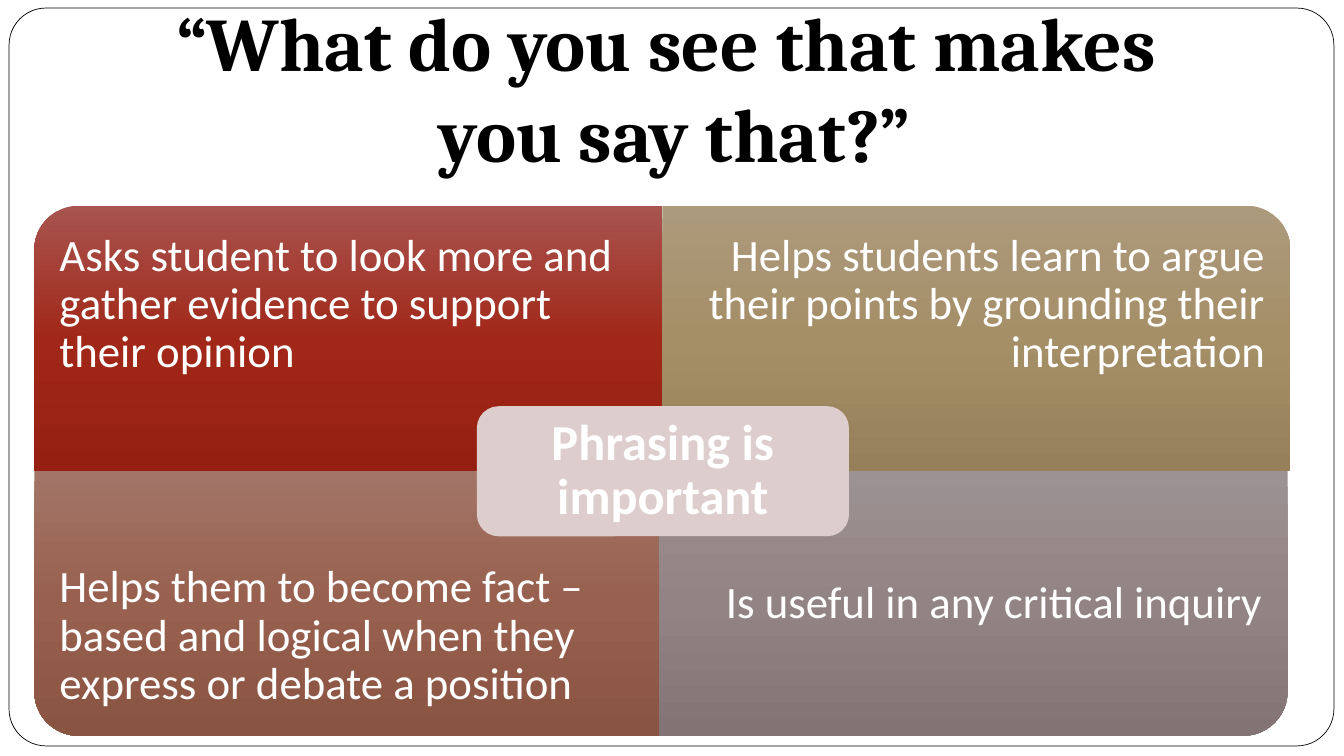
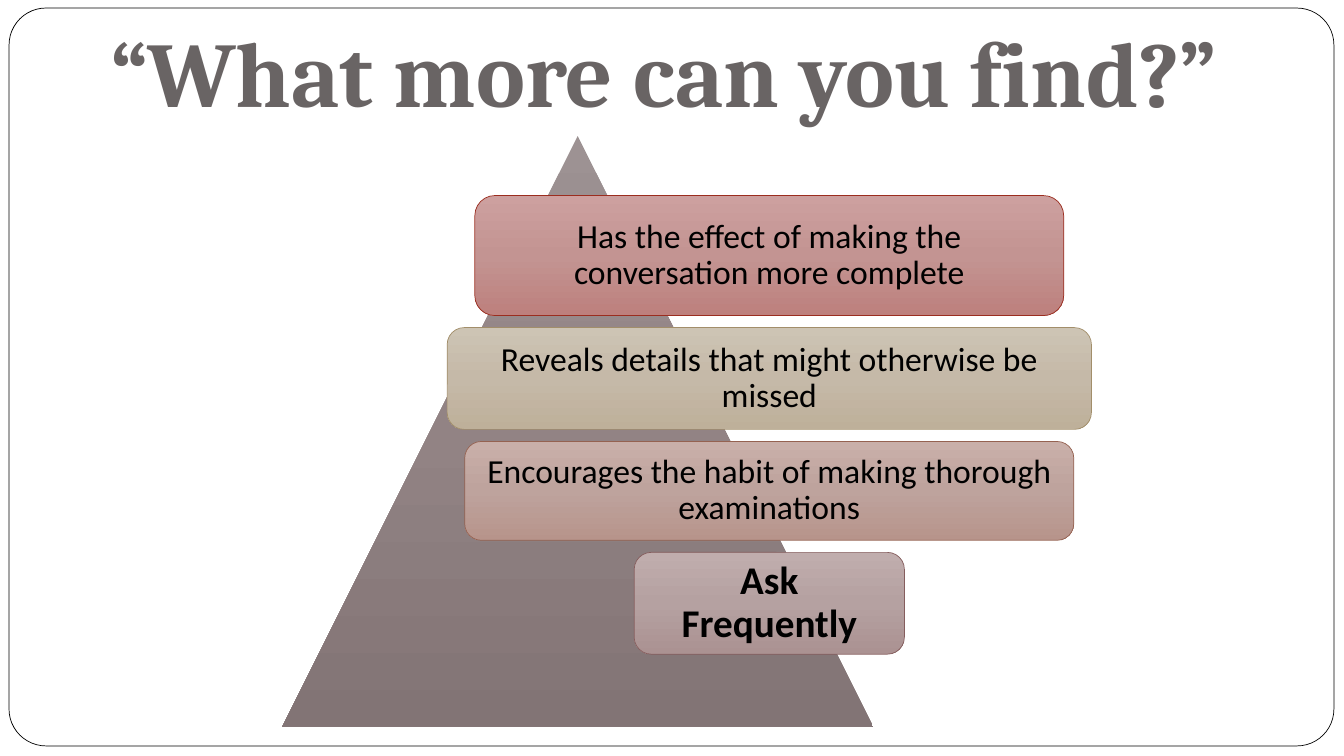
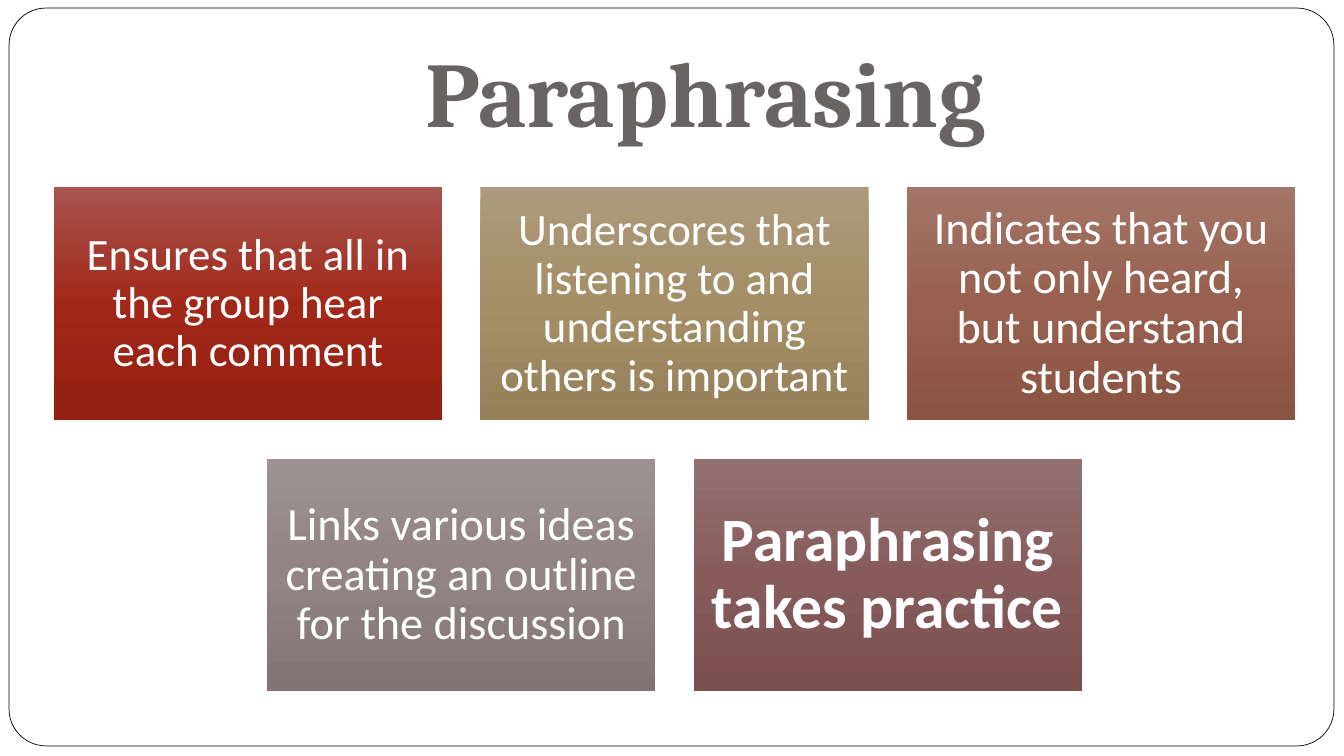
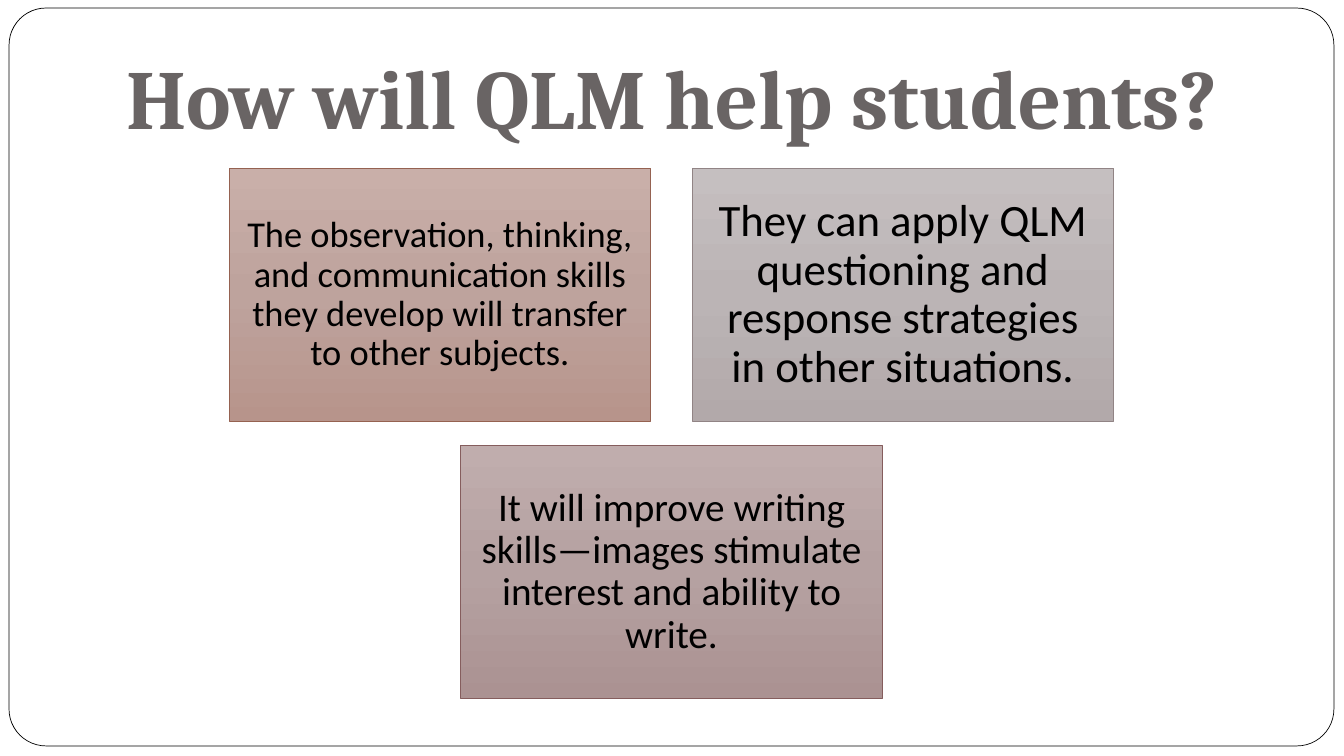
import copy

import pptx
import pptx.dml.color
import pptx.enum.shapes
import pptx.enum.text
import pptx.oxml.ns
import pptx.util

Inches = pptx.util.Inches
Pt = pptx.util.Pt
RGBColor = pptx.dml.color.RGBColor
MSO_SHAPE = pptx.enum.shapes.MSO_SHAPE
PP_ALIGN = pptx.enum.text.PP_ALIGN
MSO_ANCHOR = pptx.enum.text.MSO_ANCHOR
qn = pptx.oxml.ns.qn

WHITE = RGBColor(0xFF, 0xFF, 0xFF)
BLACK = RGBColor(0x00, 0x00, 0x00)
TITLE_GREY = RGBColor(0x69, 0x64, 0x64)
PALE_ROSE = RGBColor(0xDE, 0xCD, 0xCD)

# Gradients run from top to bottom in three stops
RED = (RGBColor(0xA8, 0x54, 0x4F), RGBColor(0xA1, 0x28, 0x19), RGBColor(0x95, 0x1F, 0x11))
SAND = (RGBColor(0xAC, 0x9A, 0x7C), RGBColor(0xA5, 0x8F, 0x67), RGBColor(0x96, 0x80, 0x59))
BROWN = (RGBColor(0xA2, 0x75, 0x68), RGBColor(0x98, 0x60, 0x4E), RGBColor(0x8A, 0x54, 0x42))
GREY = (RGBColor(0x9D, 0x92, 0x93), RGBColor(0x92, 0x83, 0x84), RGBColor(0x82, 0x74, 0x75))
PLUM = (RGBColor(0x93, 0x71, 0x71), RGBColor(0x87, 0x5B, 0x5B), RGBColor(0x7A, 0x4F, 0x4F))
LIGHT_RED = (RGBColor(0xCD, 0xA0, 0x9F), RGBColor(0xC3, 0x94, 0x92), RGBColor(0xBD, 0x80, 0x7D))
LIGHT_SAND = (RGBColor(0xCD, 0xC4, 0xB4), RGBColor(0xC5, 0xB9, 0xA8), RGBColor(0xBE, 0xB0, 0x9A))
LIGHT_BROWN = (RGBColor(0xC9, 0xAF, 0xA9), RGBColor(0xBE, 0xA3, 0x9D), RGBColor(0xB7, 0x94, 0x8B))
LIGHT_GREY = (RGBColor(0xC5, 0xBF, 0xC0), RGBColor(0xBB, 0xB4, 0xB5), RGBColor(0xB2, 0xA9, 0xAA))
LIGHT_PLUM = (RGBColor(0xC0, 0xAD, 0xAD), RGBColor(0xB5, 0xA1, 0xA1), RGBColor(0xAB, 0x92, 0x92))

OUTLINES = {
    LIGHT_RED: RGBColor(0x9B, 0x2D, 0x1F),
    LIGHT_SAND: RGBColor(0xA2, 0x8E, 0x6A),
    LIGHT_BROWN: RGBColor(0x95, 0x62, 0x51),
    LIGHT_GREY: RGBColor(0x91, 0x84, 0x85),
    LIGHT_PLUM: RGBColor(0x85, 0x5D, 0x5D),
}


def add_panel(slide, preset, left, top, width, height, paint):
    """Add a shape whose paint is one colour or a three-stop gradient."""
    shape = slide.shapes.add_shape(preset, Inches(left), Inches(top), Inches(width), Inches(height))
    shape.shadow.inherit = False
    if isinstance(paint, RGBColor):
        shape.fill.solid()
        shape.fill.fore_color.rgb = paint
    else:
        shape.fill.gradient()
        shape.fill.gradient_angle = 270
        gradient = shape.element.spPr.find(qn("a:gradFill"))
        gradient.set("rotWithShape", "0")
        stop_list = gradient.find(qn("a:gsLst"))
        stop_list.append(copy.deepcopy(stop_list[0]))
        for stop, position, colour in zip(shape.fill.gradient_stops, (0, 0.5, 1), paint):
            stop.position = position
            stop.color.rgb = colour
    if paint in OUTLINES:
        shape.line.color.rgb = OUTLINES[paint]
        shape.line.width = Pt(0.5)
    else:
        shape.line.fill.background()
    return shape


def write_text(shape, lines, size, colour, inset, font="Calibri", bold=False,
               align=PP_ALIGN.CENTER, anchor=MSO_ANCHOR.MIDDLE, spacing=0.9):
    frame = shape.text_frame
    frame.word_wrap = True
    frame.auto_size = pptx.enum.text.MSO_AUTO_SIZE.NONE
    frame.vertical_anchor = anchor
    frame.margin_left = frame.margin_right = Inches(inset)
    frame.margin_top = frame.margin_bottom = Inches(inset)
    paragraph = frame.paragraphs[0]
    paragraph.alignment = align
    paragraph.line_spacing = spacing
    for number, line in enumerate(lines):
        if number:
            paragraph.add_line_break()
        run = paragraph.add_run()
        run.text = line
        run.font.name = font
        run.font.size = Pt(size)
        run.font.bold = bold
        run.font.color.rgb = colour


presentation = pptx.Presentation()
presentation.slide_width = Inches(13.33)
presentation.slide_height = Inches(7.5)
layout = presentation.slide_layouts[5]

# Titles: lines, size, colour, left, top, width, height
titles = [
    (["“What do you see that makes ", "you say that?”"], 54, BLACK, 0.34, 0.17, 12.7, 1.69),
    (["“What more can you find?”"], 66, TITLE_GREY, 0, 0.17, 13.17, 1.18),
    (["Paraphrasing"], 66, TITLE_GREY, 1.33, 0.3, 11.33, 1.25),
    (["How will QLM help students?"], 60, TITLE_GREY, 0.6, 0.3, 12.13, 1.25),
]
slides = []
for lines, size, colour, left, top, width, height in titles:
    slide = presentation.slides.add_slide(layout)
    title = slide.shapes.title
    title.left, title.top = Inches(left), Inches(top)
    title.width, title.height = Inches(width), Inches(height)
    write_text(title, lines, size, colour, 0.1, font="Cambria", bold=True,
               anchor=MSO_ANCHOR.BOTTOM, spacing=1.0)
    title.text_frame.margin_top = Inches(0.05)
    slides.append(slide)
phrasing_slide, more_slide, paraphrasing_slide, students_slide = slides

# The rounded frame belongs to the layout, behind everything else
page_frame = add_panel(phrasing_slide, MSO_SHAPE.ROUNDED_RECTANGLE, 0.09, 0.08, 13.14, 7.32, WHITE)
page_frame.adjustments[0] = 0.05
page_frame.line.color.rgb = BLACK
page_frame.line.width = Pt(0.5)
page_frame.element.nvSpPr.cNvPr.set("id", "20")
layout.shapes.element.insert(2, page_frame.element)

# Phrasing: four quadrants, each with its outer corner rounded
quad_width, quad_height, caption_height = 6.23, 2.63, 1.97
quadrants = [
    ("Asks student to look more and gather evidence to support their opinion",
     RED, 270, 0.34, 2.04, 2.04, PP_ALIGN.LEFT),
    ("Helps students learn to argue their points by grounding their interpretation",
     SAND, 0, 6.57, 2.04, 2.04, PP_ALIGN.RIGHT),
    ("Helps them to become fact –based and logical when they express or debate a position",
     BROWN, 180, 0.34, 4.67, 5.33, PP_ALIGN.LEFT),
    ("Is useful in any critical inquiry",
     GREY, 90, 6.54, 4.67, 5.01, PP_ALIGN.RIGHT),
]
for text, paint, rotation, left, top, caption_top, align in quadrants:
    width, height = quad_width, quad_height
    shape_left, shape_top = left, top
    if rotation % 180:
        width, height = height, width
        shape_left += (quad_width - width) / 2
        shape_top += (quad_height - height) / 2
    quadrant = add_panel(phrasing_slide, MSO_SHAPE.ROUND_1_RECTANGLE,
                         shape_left, shape_top, width, height, paint)
    quadrant.rotation = rotation
    caption = phrasing_slide.shapes.add_textbox(
        Inches(left), Inches(caption_top), Inches(quad_width), Inches(caption_height))
    write_text(caption, [text], 32, WHITE, 0.25, align=align)

hub = add_panel(phrasing_slide, MSO_SHAPE.ROUNDED_RECTANGLE, 4.73, 4.03, 3.69, 1.29, PALE_ROSE)
write_text(hub, ["Phrasing is important"], 36, WHITE, 0.15, bold=True)

# What more: bars stacked on a shared centre line over a triangle
add_panel(more_slide, MSO_SHAPE.ISOSCELES_TRIANGLE, 2.8, 1.35, 5.86, 5.86, GREY)
bars = [
    ("Has the effect of making the conversation more complete", LIGHT_RED, 5.84, 1.19, 24, 0.1, False),
    ("Reveals details that might otherwise be missed", LIGHT_SAND, 6.39, 1.01, 24, 0.1, False),
    ("Encourages the habit of making thorough examinations", LIGHT_BROWN, 6.04, 0.98, 24, 0.1, False),
    ("Ask Frequently", LIGHT_PLUM, 2.68, 1.01, 28, 0.12, True),
]
bar_centre, bar_gap, bar_top = 7.63, 0.12, 1.94
for text, paint, width, height, size, inset, bold in bars:
    bar = add_panel(more_slide, MSO_SHAPE.ROUNDED_RECTANGLE,
                    bar_centre - width / 2, bar_top, width, height, paint)
    write_text(bar, [text], size, BLACK, inset, bold=bold)
    bar_top += height + bar_gap

# Paraphrasing and students: rows of equal cards, each row centred
paraphrasing_rows = [
    [("Ensures that all in the group hear each comment", RED, 32, 0.13, False),
     ("Underscores that listening to and understanding others is important", SAND, 32, 0.13, False),
     ("Indicates that you not only heard, but understand students", BROWN, 33, 0.14, False)],
    [("Links various ideas creating an outline for the discussion", GREY, 33, 0.14, False),
     ("Paraphrasing takes practice", PLUM, 44, 0.18, True)],
]
students_rows = [
    [("The observation, thinking, and communication skills they develop will transfer to other subjects.",
      LIGHT_BROWN, 26, 0.11, False),
     ("They can apply QLM questioning and response strategies in other situations.",
      LIGHT_GREY, 32, 0.13, False)],
    [("It will improve writing skills—images stimulate interest and ability to write.",
      LIGHT_PLUM, 28, 0.12, False)],
]
# Slide, rows, text colour, centre, top, card width, card height, column gap, row gap
card_grids = [
    (paraphrasing_slide, paraphrasing_rows, WHITE, 6.69, 1.86, 3.85, 2.31, 0.38, 0.38),
    (students_slide, students_rows, BLACK, 6.66, 1.67, 4.18, 2.51, 0.41, 0.24),
]
for slide, rows, colour, centre, top, width, height, column_gap, row_gap in card_grids:
    for row in rows:
        left = centre - (len(row) * (width + column_gap) - column_gap) / 2
        for text, paint, size, inset, bold in row:
            card = add_panel(slide, MSO_SHAPE.RECTANGLE, left, top, width, height, paint)
            write_text(card, [text], size, colour, inset, bold=bold)
            left += width + column_gap
        top += height + row_gap

presentation.save("out.pptx")
